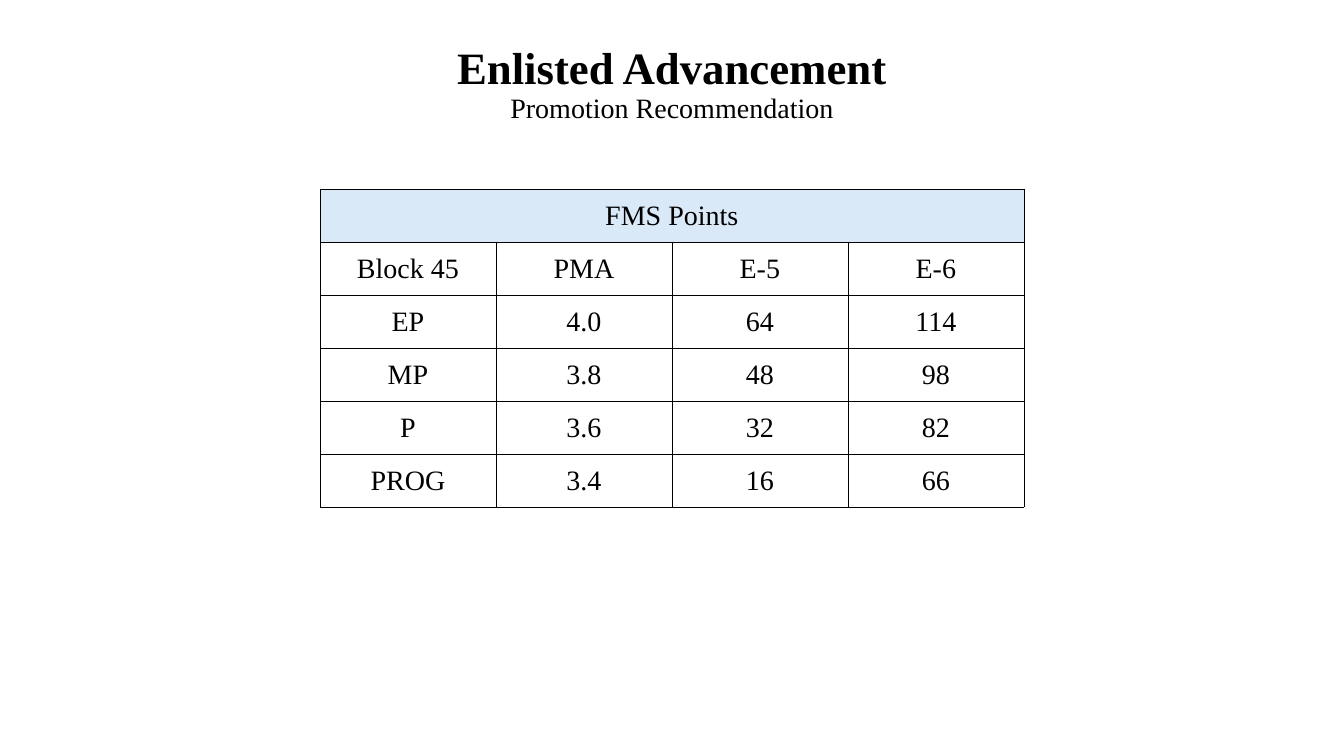
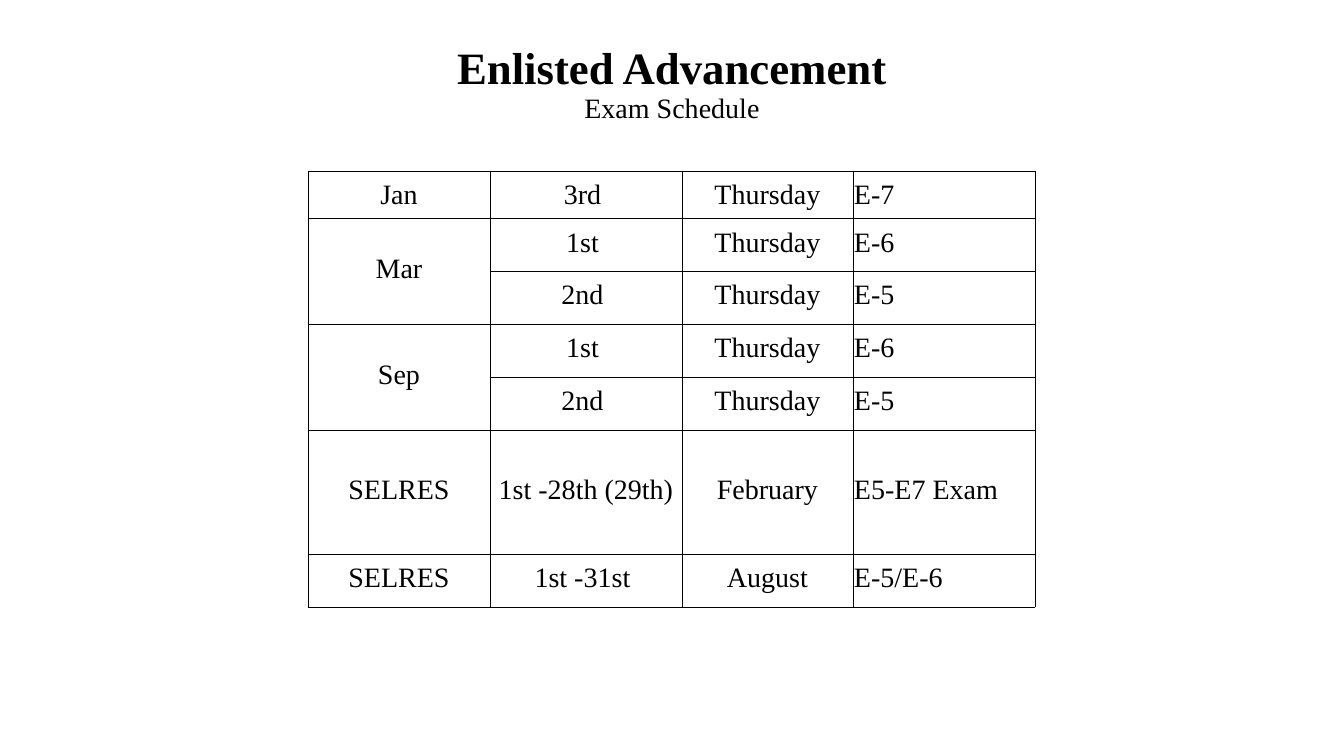
"""Build two slides on enlisted advancement: promotion points and exam schedule."""
from copy import deepcopy
from dataclasses import dataclass

from lxml import etree
from pptx import Presentation
from pptx import util as u
from pptx.dml.color import RGBColor
from pptx.enum import text
from pptx.oxml.ns import qn

EMU_PER_PX = 914400 / 100.8
SLIDE_WIDTH, SLIDE_HEIGHT = 1344, 756
TITLE_HEIGHT = 171
FONT = "Times New Roman"
TITLE_SIZE, BODY_SIZE = 32, 20
COLORS = {"ink": "000000", "header": "DAE9F8"}
CENTER, LEFT = text.PP_ALIGN.CENTER, text.PP_ALIGN.LEFT


@dataclass(frozen=True)
class Row:
    """One table row; empty texts belong to merged cells."""
    texts: tuple[str, ...]
    height: int = 53
    bottom_inset: int = 0


@dataclass(frozen=True)
class Grid:
    """A table with its merges as (row, column, last row, last column)."""
    left: int
    top: int
    widths: tuple[int, ...]
    aligns: tuple[text.PP_ALIGN, ...]
    rows: tuple[Row, ...]
    merges: tuple[tuple[int, int, int, int], ...]
    has_header: bool = False


@dataclass(frozen=True)
class Page:
    """A slide's subtitle and table."""
    subtitle: str
    grid: Grid


PAGES = (
    Page("Promotion Recommendation", Grid(
        left=320, top=189, widths=(176,) * 4, aligns=(CENTER,) * 4,
        rows=(
            Row(("FMS Points", "", "", "")),
            Row(("Block 45", "PMA", "E-5", "E-6")),
            Row(("EP", "4.0", "64", "114")),
            Row(("MP", "3.8", "48", "98")),
            Row(("P", "3.6", "32", "82")),
            Row(("PROG", "3.4", "16", "66")),
        ),
        merges=((0, 0, 0, 3),), has_header=True)),
    Page("Exam Schedule", Grid(
        left=308, top=171, widths=(182, 192, 171, 182),
        aligns=(CENTER, CENTER, CENTER, LEFT),
        rows=(
            Row(("Jan", "3rd ", "Thursday", "E-7"), height=47),
            Row(("Mar", "1st ", "Thursday", "E-6"), bottom_inset=5),
            Row(("", "2nd ", "Thursday", "E-5"), bottom_inset=5),
            Row(("Sep", "1st ", "Thursday", "E-6"), bottom_inset=5),
            Row(("", "2nd ", "Thursday", "E-5"), bottom_inset=5),
            Row(("SELRES", "1st -28th (29th)", "February", "E5-E7 Exam"),
                height=124, bottom_inset=5),
            Row(("SELRES", "1st -31st ", "August", "E-5/E-6"), bottom_inset=5),
        ),
        merges=((1, 0, 2, 0), (3, 0, 4, 0)))),
)


def px(length: int) -> u.Emu:
    """Turn pixels into EMU."""
    return u.Emu(round(length * EMU_PER_PX))


def set_font(font, size: int, bold: bool = False) -> None:
    """Apply the shared typeface and ink colour."""
    font.name, font.size, font.bold = FONT, u.Pt(size), bold
    font.color.rgb = RGBColor.from_string(COLORS["ink"])


def add_title(slide, subtitle: str) -> None:
    """Format the title placeholder as a bold heading over a subtitle."""
    title = slide.shapes.title
    title.left, title.top = px(0), px(0)
    title.width, title.height = px(SLIDE_WIDTH), px(TITLE_HEIGHT)
    frame = title.text_frame
    frame.word_wrap = True
    frame.auto_size = text.MSO_AUTO_SIZE.NONE
    frame.vertical_anchor = text.MSO_ANCHOR.MIDDLE
    paragraph = frame.paragraphs[0]
    paragraph.alignment, paragraph.line_spacing = CENTER, 0.9
    heading = paragraph.add_run()
    heading.text = "Enlisted Advancement"
    set_font(heading.font, TITLE_SIZE, bold=True)
    paragraph.add_line_break()
    line_break = paragraph._p.find(qn("a:br"))
    line_break.append(deepcopy(heading._r.find(qn("a:rPr"))))
    detail = paragraph.add_run()
    detail.text = subtitle
    set_font(detail.font, BODY_SIZE)


def set_borders(cell) -> None:
    """Draw a thin line on all four sides of a cell."""
    properties = cell._tc.get_or_add_tcPr()
    for position, side in enumerate(("lnL", "lnR", "lnT", "lnB")):
        line = etree.Element(qn(f"a:{side}"), w=str(u.Pt(0.5)))
        fill = etree.SubElement(line, qn("a:solidFill"))
        etree.SubElement(fill, qn("a:srgbClr"), val=COLORS["ink"])
        properties.insert(position, line)


def format_cell(cell, content: str, align: text.PP_ALIGN,
                bottom_inset: int, is_header: bool) -> None:
    """Fill, border and write one cell."""
    cell.margin_left = cell.margin_right = cell.margin_top = px(1)
    cell.margin_bottom = px(bottom_inset)
    cell.vertical_anchor = text.MSO_ANCHOR.MIDDLE
    if is_header:
        cell.fill.solid()
        cell.fill.fore_color.rgb = RGBColor.from_string(COLORS["header"])
    else:
        cell.fill.background()
    set_borders(cell)
    paragraph = cell.text_frame.paragraphs[0]
    paragraph.alignment = align
    if content:
        paragraph.text = content
    set_font(paragraph.font, BODY_SIZE)


def add_grid(slide, grid: Grid) -> None:
    """Add a bordered table."""
    table = slide.shapes.add_table(
        len(grid.rows), len(grid.widths), px(grid.left), px(grid.top),
        px(sum(grid.widths)), px(sum(row.height for row in grid.rows))).table
    table.first_row = grid.has_header
    table.horz_banding = False
    for column, width in zip(table.columns, grid.widths):
        column.width = px(width)
    for row_index, row in enumerate(grid.rows):
        table.rows[row_index].height = px(row.height)
        for column_index, content in enumerate(row.texts):
            format_cell(table.cell(row_index, column_index), content,
                        grid.aligns[column_index], row.bottom_inset,
                        grid.has_header and row_index == 0)
    for first_row, first_column, last_row, last_column in grid.merges:
        table.cell(first_row, first_column).merge(
            table.cell(last_row, last_column))


def main() -> None:
    """Build and save the presentation."""
    presentation = Presentation()
    presentation.slide_width = px(SLIDE_WIDTH)
    presentation.slide_height = px(SLIDE_HEIGHT)
    title_only = presentation.slide_layouts.get_by_name("Title Only")
    for page in PAGES:
        slide = presentation.slides.add_slide(title_only)
        add_title(slide, page.subtitle)
        add_grid(slide, page.grid)
    presentation.save("out.pptx")


if __name__ == "__main__":
    main()
